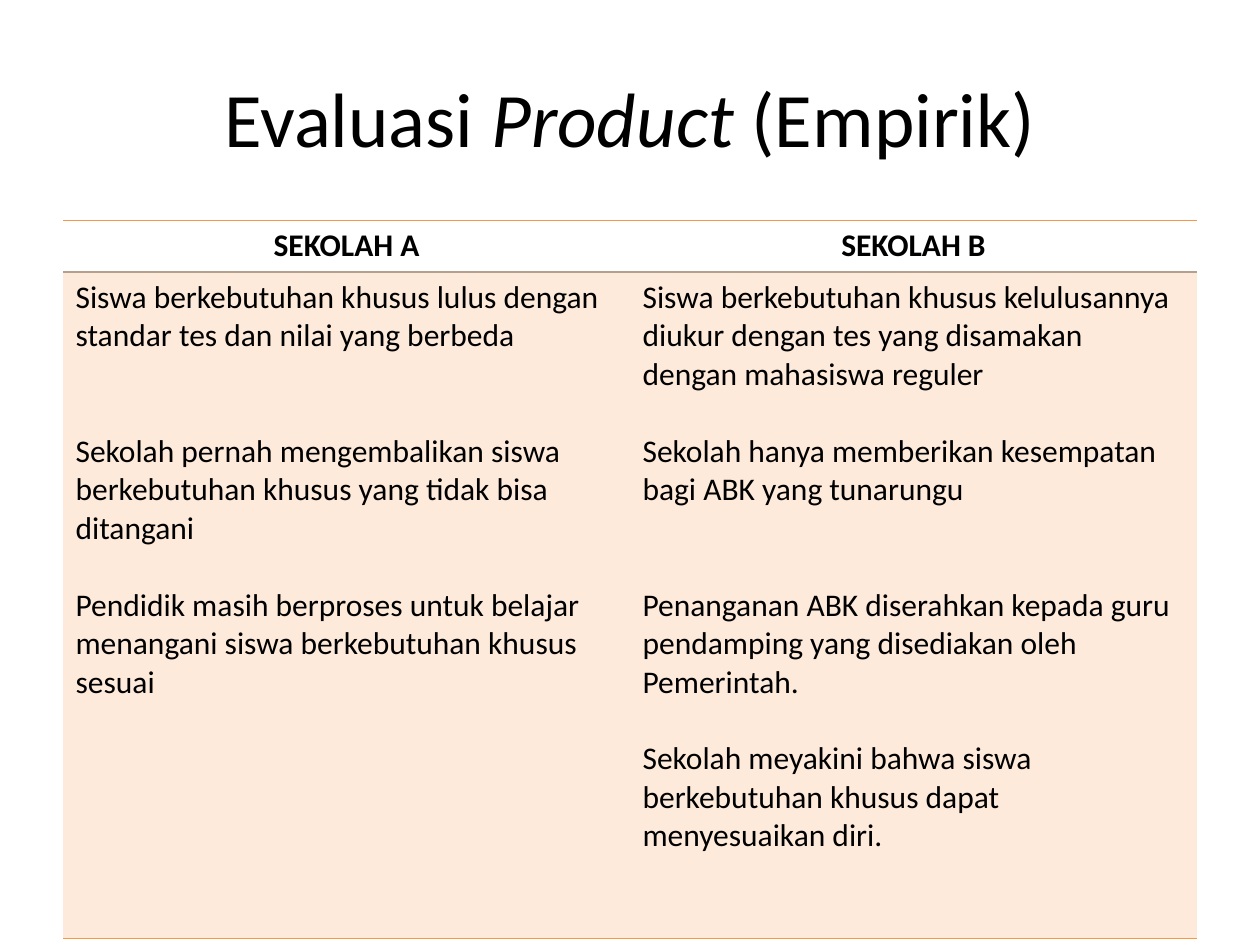
from dataclasses import dataclass

from lxml.etree import SubElement
from pptx import Presentation
from pptx.dml.color import RGBColor as RGB
from pptx.enum.text import MSO_ANCHOR as Anchor, PP_ALIGN as Align
from pptx.oxml.ns import qn
from pptx.util import Inches, Pt

NO_GRID_STYLE = "{2D5ABB26-0587-4C30-8999-92F81FD0307C}"
TITLE_ONLY = 5

TITLE = [("Evaluasi ", False), ("Product", True), (" (Empirik)", False)]

# Each finding is paired with the number of lines left open above it.
SCHOOLS = {
    "SEKOLAH A": [
        ("Siswa berkebutuhan khusus lulus dengan standar tes dan nilai yang berbeda", 0),
        ("Sekolah pernah mengembalikan siswa berkebutuhan khusus yang tidak bisa ditangani", 2),
        ("Pendidik masih berproses untuk belajar menangani siswa berkebutuhan khusus sesuai", 1),
    ],
    "SEKOLAH B": [
        ("Siswa berkebutuhan khusus kelulusannya diukur dengan tes yang disamakan "
         "dengan mahasiswa reguler", 0),
        ("Sekolah hanya memberikan kesempatan bagi ABK yang tunarungu", 1),
        ("Penanganan ABK diserahkan kepada guru pendamping yang disediakan oleh Pemerintah.", 2),
        ("Sekolah meyakini bahwa siswa berkebutuhan khusus dapat menyesuaikan diri.", 1),
    ],
}


@dataclass(frozen=True)
class Theme:
    font: str = "Calibri"
    text: str = "000000"
    accent: str = "F79646"
    header_rule: str = "B4A08C"
    body_fill: str = "FDEADA"
    title_size: int = 44
    table_size: int = 18
    line_pitch: int = 22
    rule_width: int = 1


class SlideBuilder:
    def __init__(self, slide, theme):
        self.slide = slide
        self.theme = theme

    def style(self, font, size, bold=False, italic=False):
        font.name = self.theme.font
        font.size = Pt(size)
        font.bold = bold
        font.italic = italic
        font.color.rgb = RGB.from_string(self.theme.text)

    def title(self, parts, left, top, width, height):
        heading = self.slide.shapes.title
        heading.left, heading.top = Inches(left), Inches(top)
        heading.width, heading.height = Inches(width), Inches(height)
        heading.text_frame.vertical_anchor = Anchor.MIDDLE
        paragraph = heading.text_frame.paragraphs[0]
        paragraph.alignment = Align.CENTER
        for wording, italic in parts:
            run = paragraph.add_run()
            run.text = wording
            self.style(run.font, self.theme.title_size, italic=italic)

    def rule(self, cell, edge, color):
        """Draw one cell border; call before the cell gets its fill."""
        line = SubElement(cell._tc.get_or_add_tcPr(), qn(f"a:{edge}"),
                          w=str(Pt(self.theme.rule_width)))
        SubElement(SubElement(line, qn("a:solidFill")), qn("a:srgbClr"), val=color)

    def header_cell(self, cell, name):
        cell.text_frame.text = name
        paragraph = cell.text_frame.paragraphs[0]
        paragraph.alignment = Align.CENTER
        self.style(paragraph.runs[0].font, self.theme.table_size, bold=True)
        self.rule(cell, "lnT", self.theme.accent)
        self.rule(cell, "lnB", self.theme.header_rule)
        cell.fill.background()

    def findings_cell(self, cell, findings):
        cell.text_frame.text = "\n".join(finding for finding, _ in findings)
        for paragraph, (_, gap) in zip(cell.text_frame.paragraphs, findings):
            if gap:
                paragraph.space_before = Pt(gap * self.theme.line_pitch)
            self.style(paragraph.runs[0].font, self.theme.table_size)
        self.rule(cell, "lnT", self.theme.header_rule)
        self.rule(cell, "lnB", self.theme.accent)
        cell.fill.solid()
        cell.fill.fore_color.rgb = RGB.from_string(self.theme.body_fill)

    def comparison(self, schools, left, top, width, row_heights):
        table = self.slide.shapes.add_table(
            len(row_heights), len(schools), Inches(left), Inches(top),
            Inches(width), Inches(sum(row_heights))).table
        table._tbl.tblPr.find(qn("a:tableStyleId")).text = NO_GRID_STYLE
        table.horz_banding = False
        for row, height in zip(table.rows, row_heights):
            row.height = Inches(height)
        for column, (name, findings) in enumerate(schools.items()):
            self.header_cell(table.cell(0, column), name)
            self.findings_cell(table.cell(1, column), findings)


def main():
    deck = Presentation()
    deck.slide_width, deck.slide_height = Inches(10), Inches(7.5)
    slide = deck.slides.add_slide(deck.slide_layouts[TITLE_ONLY])
    builder = SlideBuilder(slide, Theme())
    builder.title(TITLE, 0.5, 0.3, 9, 1.25)
    builder.comparison(SCHOOLS, 0.5, 1.75, 9, row_heights=(0.41, 5.29))
    deck.save("out.pptx")


if __name__ == "__main__":
    main()
